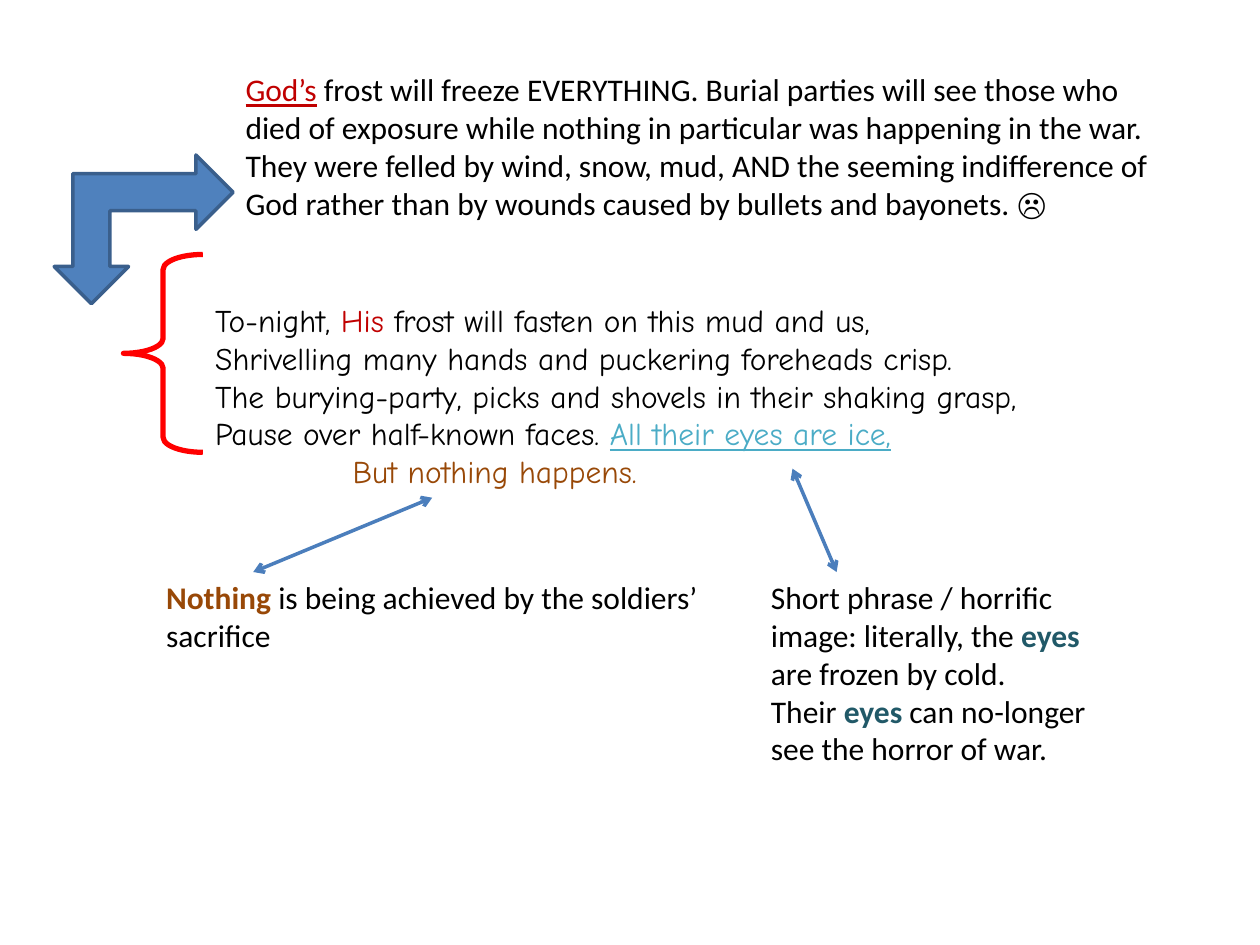
from lxml.etree import SubElement
from pptx import Presentation
from pptx.dml.color import RGBColor
from pptx.enum.shapes import MSO_CONNECTOR as Connector, MSO_SHAPE as Shape
from pptx.enum.text import MSO_AUTO_SIZE as AutoSize
from pptx.oxml.ns import qn
from pptx.util import Inches, Pt

COLOURS = {
    "black": "000000", "god": "C00000", "ice": "4BACC6", "eyes": "215968",
    "nothing": "984807", "brace": "FF0000", "arrow": "4F81BD",
    "arrow_edge": "3A5F8C", "link": "4B7EBC",
}


def colour(name):
    """Return the named colour."""
    return RGBColor.from_string(COLOURS[name])


def add_text(slide, box, paragraphs, font_name="Calibri"):
    """Fill a text box with paragraphs of (text, colour, format) runs."""
    frame = slide.shapes.add_textbox(*map(Inches, box)).text_frame
    frame.word_wrap = True
    frame.auto_size = AutoSize.SHAPE_TO_FIT_TEXT
    for index, runs in enumerate(paragraphs):
        paragraph = frame.add_paragraph() if index else frame.paragraphs[0]
        for text, colour_name, formats in runs:
            for line_index, line in enumerate(text.split("\n")):
                if line_index:
                    paragraph.add_line_break()
                run = paragraph.add_run()
                run.text = line
                values = {"name": font_name, "size": Pt(18), **formats}
                for attribute, value in values.items():
                    setattr(run.font, attribute, value)
                run.font.color.rgb = colour(colour_name)
    return frame


def add_outlined_shape(slide, kind, box, line_name, width, fill_name=None):
    """Add a preset shape with an outline and an optional fill."""
    shape = slide.shapes.add_shape(kind, *map(Inches, box))
    shape.shadow.inherit = False
    if fill_name:
        shape.fill.solid()
        shape.fill.fore_color.rgb = colour(fill_name)
    else:
        shape.fill.background()
    shape.line.color.rgb = colour(line_name)
    shape.line.width = Pt(width)
    return shape


def add_link(slide, start, end):
    """Join two points with a double-headed arrow."""
    link = slide.shapes.add_connector(Connector.STRAIGHT, *map(Inches, start + end))
    link.line.color.rgb = colour("link")
    link.line.width = Pt(2)
    properties = link.line._get_or_add_ln()
    for tag in ("a:headEnd", "a:tailEnd"):
        SubElement(properties, qn(tag), type="arrow")
    SubElement(link._element.spPr, qn("a:effectLst"))


def add_summary(slide, box, paragraphs):
    """Place the summary and the bent arrow to its left."""
    left, top, _, _ = box
    arrow = add_outlined_shape(slide, Shape.LEFT_UP_ARROW,
                               (left - 1.42, top + 0.72, 1.42, 1.18),
                               "arrow_edge", 2, "arrow")
    arrow.rotation = 180
    add_text(slide, box, paragraphs)


def add_stanza(slide, box, paragraphs):
    """Place the stanza, its indented refrain and the brace beside it."""
    left, top, _, _ = box
    frame = add_text(slide, box, paragraphs, "Comic Neue")
    refrain = frame.paragraphs[-1]._p.get_or_add_pPr()
    refrain.set("marL", str(Inches(1.09)))
    brace = add_outlined_shape(slide, Shape.LEFT_BRACE,
                               (left - 0.63, top - 0.32, 0.63, 1.57), "brace", 3)
    brace.adjustments[0] = 0.188


def add_comment(slide, box, paragraphs, offset, target):
    """Place a comment and link its top edge to a phrase of the stanza."""
    left, top, _, _ = box
    add_text(slide, box, paragraphs)
    add_link(slide, target, (left + offset, top))


def main():
    """Build and save the slide."""
    presentation = Presentation()
    presentation.slide_width, presentation.slide_height = Inches(10), Inches(7.5)
    slide = presentation.slides.add_slide(presentation.slide_layouts[6])
    bold, underlined = {"bold": True}, {"underline": True}

    add_stanza(slide, (1.61, 2.34, 7.17, 1.62), [
        [("To-night, ", "black", {}),
         ("His", "god", {}),
         (" frost will fasten on this mud and us,\n"
          "Shrivelling many hands and puckering foreheads crisp.\n"
          "The burying-party, picks and shovels in their shaking grasp,\n"
          "Pause over half-known faces. ", "black", {}),
         ("All their eyes are ice,", "ice", underlined)],
        [("But nothing happens.", "nothing", {})],
    ])
    add_summary(slide, (1.85, 0.51, 7.62, 1.31), [
        [("God’s", "god", underlined),
         (" frost will freeze EVERYTHING. Burial parties will see those who "
          "died of exposure while nothing in particular was happening in the "
          "war. They were felled by wind, snow, mud, AND the seeming "
          "indifference of God rather than by wounds caused by bullets and "
          "bayonets. ☹", "black", {})],
    ])
    add_comment(slide, (1.22, 4.54, 5, 0.71), [
        [("Nothing ", "nothing", bold),
         ("is being achieved by the soldiers’ sacrifice", "black", {})],
    ], 0.79, (3.43, 3.95))
    add_comment(slide, (6.02, 4.54, 2.76, 1.62), [
        [("Short phrase / horrific image: literally, the ", "black", {}),
         ("eyes", "eyes", bold),
         (" are frozen by cold.", "black", {})],
        [("Their ", "black", {}),
         ("eyes", "eyes", bold),
         (" can no-longer see the horror of war.", "black", {})],
    ], 0.62, (6.29, 3.72))
    presentation.save("out.pptx")


if __name__ == "__main__":
    main()
